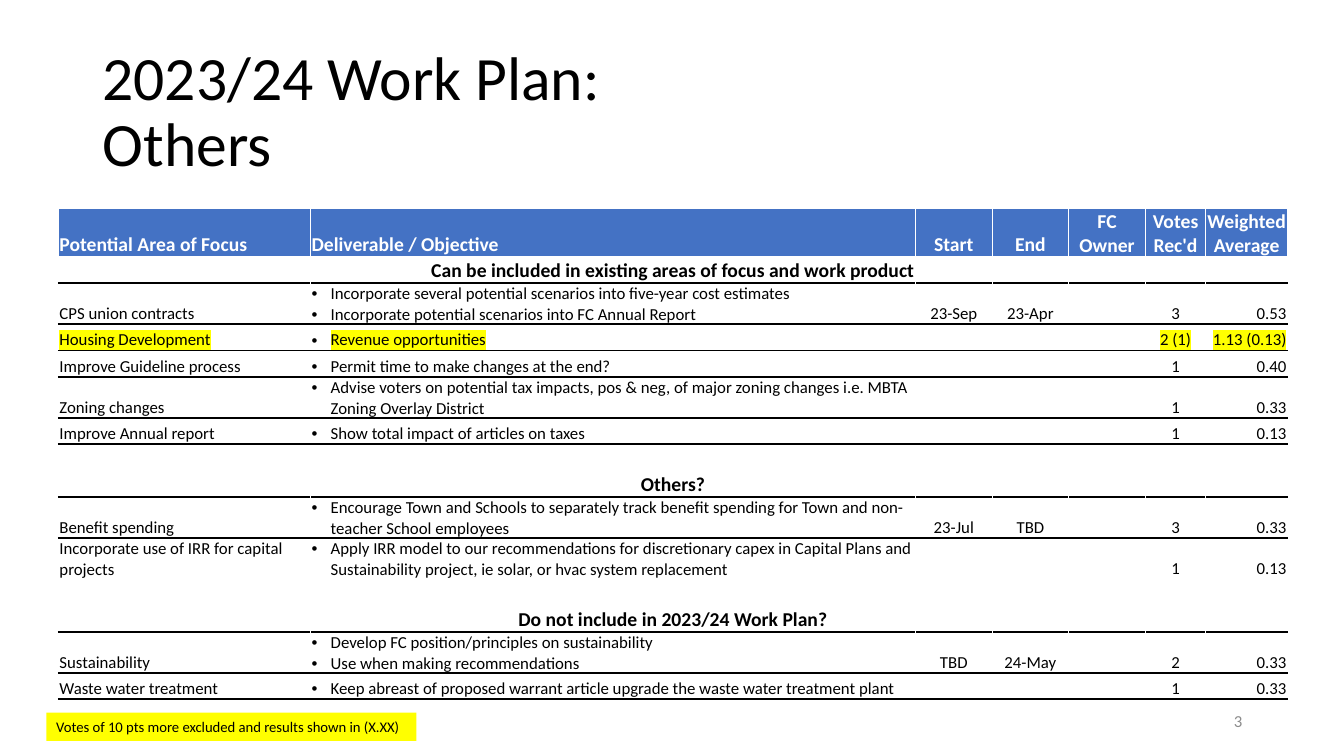
from lxml.etree import SubElement
from pptx import Presentation
from pptx.dml.color import RGBColor
from pptx.enum.shapes import MSO_SHAPE
from pptx.enum.text import MSO_ANCHOR, PP_ALIGN
from pptx.oxml.ns import qn
from pptx.util import Inches, Pt

BLACK = RGBColor(0x00, 0x00, 0x00)
WHITE = RGBColor(0xFF, 0xFF, 0xFF)
BLUE = RGBColor(0x44, 0x72, 0xC4)
GREY = RGBColor(0x8C, 0x8C, 0x8C)
YELLOW = RGBColor(0xFF, 0xFF, 0x00)
FONT = "Calibri"
LEFT, MID, RIGHT = PP_ALIGN.LEFT, PP_ALIGN.CENTER, PP_ALIGN.RIGHT

WIDTHS = [2.5, 6, 0.76, 0.76, 0.76, 0.6, 0.81]
ALIGNS = [LEFT, LEFT, MID, MID, MID, MID, RIGHT]
# Seven texts make an item, one a section heading, none a gap
ROWS = [
    ["Potential Area of Focus", "Deliverable / Objective", "Start", "End",
     "FC Owner", "Votes Rec'd", "Weighted Average"],
    ["Can be included in existing areas of focus and work product"],
    ["CPS union contracts",
     "Incorporate several potential scenarios into five-year cost estimates\n"
     "Incorporate potential scenarios into FC Annual Report",
     "23-Sep", "23-Apr", "", "3", "0.53"],
    ["Housing Development", "Revenue opportunities", "", "", "", "2 (1)", "1.13 (0.13)"],
    ["Improve Guideline process", "Permit time to make changes at the end?",
     "", "", "", "1", "0.40"],
    ["Zoning changes",
     "Advise voters on potential tax impacts, pos & neg, of major zoning changes "
     "i.e. MBTA Zoning Overlay District", "", "", "", "1", "0.33"],
    ["Improve Annual report", "Show total impact of articles on taxes",
     "", "", "", "1", "0.13"],
    [],
    ["Others?"],
    ["Benefit spending",
     "Encourage Town and Schools to separately track benefit spending for Town and "
     "non-teacher School employees", "23-Jul", "TBD", "", "3", "0.33"],
    ["Incorporate use of IRR for capital projects",
     "Apply IRR model to our recommendations for discretionary capex in Capital Plans "
     "and Sustainability project, ie solar, or hvac system replacement",
     "", "", "", "1", "0.13"],
    [],
    ["Do not include in 2023/24 Work Plan?"],
    ["Sustainability",
     "Develop FC position/principles on sustainability\nUse when making recommendations",
     "TBD", "24-May", "", "2", "0.33"],
    ["Waste water treatment",
     "Keep abreast of proposed warrant article upgrade the waste water treatment plant",
     "", "", "", "1", "0.33"],
]
MARKED = 3                # highlighted row
UNRULED = {0, 7, 10, 11}  # rows with no black line below


def put(thing, **values):
    for name, value in values.items():
        setattr(thing, name, value)


def style(para, size, color, bold=False, mark=False):
    for run in para.runs:
        put(run.font, size=Pt(size), bold=bold)
        run.font.color.rgb = color
        if mark:
            light = SubElement(run.font._element, qn("a:highlight"))
            SubElement(light, qn("a:srgbClr"), val=str(YELLOW))
        run.font.name = FONT
    if not para.runs:
        SubElement(para._p, qn("a:endParaRPr"), sz=str(size * 100))


def bullet(para):
    props = para._p.get_or_add_pPr()
    props.set("marL", str(Inches(0.19)))
    props.set("indent", str(-Inches(0.19)))
    SubElement(props, qn("a:buFont"), typeface="Arial")
    SubElement(props, qn("a:buChar"), char="•")


def border(cell, side, color, width):
    line = SubElement(cell._tc.get_or_add_tcPr(), qn("a:ln" + side), w=str(Pt(width)))
    fill = SubElement(line, qn("a:solidFill"))
    SubElement(fill, qn("a:srgbClr"), val=str(color))


def add_text(slide, box, text, size, color, align=LEFT, space=None):
    frame = slide.shapes.add_textbox(*map(Inches, box)).text_frame
    put(frame, word_wrap=True, vertical_anchor=MSO_ANCHOR.MIDDLE, text=text)
    para = frame.paragraphs[0]
    put(para, alignment=align, line_spacing=space)
    style(para, size, color)


def add_plan(slide, box):
    table = slide.shapes.add_table(len(ROWS), len(WIDTHS), *map(Inches, box)).table
    put(table, first_row=False, horz_banding=False)
    for col, width in zip(table.columns, WIDTHS):
        col.width = Inches(width)
    above = WHITE
    for i, texts in enumerate(ROWS):
        head, section = i == 0, len(texts) == 1
        below = WHITE if i in UNRULED else BLACK
        table.rows[i].height = Inches(0.26)
        filled = texts + [""] * (len(WIDTHS) - len(texts))
        for j, text in enumerate(filled):
            cell = table.cell(i, j)
            put(cell, vertical_anchor=MSO_ANCHOR.BOTTOM, margin_left=Inches(0.01),
                margin_right=Inches(0.01), margin_top=Inches(0.01), margin_bottom=0)
            # Borders come before the fill
            for side, color in zip("LRTB", (WHITE, WHITE, above, below)):
                border(cell, side, color, 1.5 if color == BLACK else 1)
            cell.fill.solid()
            cell.fill.fore_color.rgb = BLUE if head else WHITE
            cell.text_frame.text = text
            for para in cell.text_frame.paragraphs:
                para.alignment = MID if section or head and j > 1 else ALIGNS[j]
                if j == 1 and text and not head:
                    bullet(para)
                style(para, 14 if head or section else 12, WHITE if head else BLACK,
                      head or section, i == MARKED)
        if section:
            table.cell(i, 0).merge(table.cell(i, len(WIDTHS) - 1))
        above = below


def add_note(slide, box, text):
    note = slide.shapes.add_shape(MSO_SHAPE.RECTANGLE, *map(Inches, box))
    note.shadow.inherit = False
    note.fill.solid()
    note.fill.fore_color.rgb = YELLOW
    note.line.fill.background()
    put(note.text_frame, word_wrap=True, vertical_anchor=MSO_ANCHOR.TOP, text=text)
    para = note.text_frame.paragraphs[0]
    para.alignment = LEFT
    style(para, 10.5, BLACK)


def main():
    deck = Presentation()
    put(deck, slide_width=Inches(13.33), slide_height=Inches(7.5))
    slide = deck.slides.add_slide(deck.slide_layouts[6])
    # Title
    add_text(slide, (0.92, 0.4, 11.5, 1.45), "2023/24 Work Plan:\vOthers", 44, BLACK,
             space=0.9)
    # Work plan table
    add_plan(slide, (0.58, 2.07, sum(WIDTHS), 0.26 * len(ROWS)))
    # Page number and footnote
    add_text(slide, (9.42, 6.95, 3, 0.4), "3", 12, GREY, RIGHT)
    add_note(slide, (0.46, 7.07, 3.67, 0.28),
             "Votes of 10 pts more excluded and results shown in (X.XX)")
    deck.save("out.pptx")


if __name__ == "__main__":
    main()
